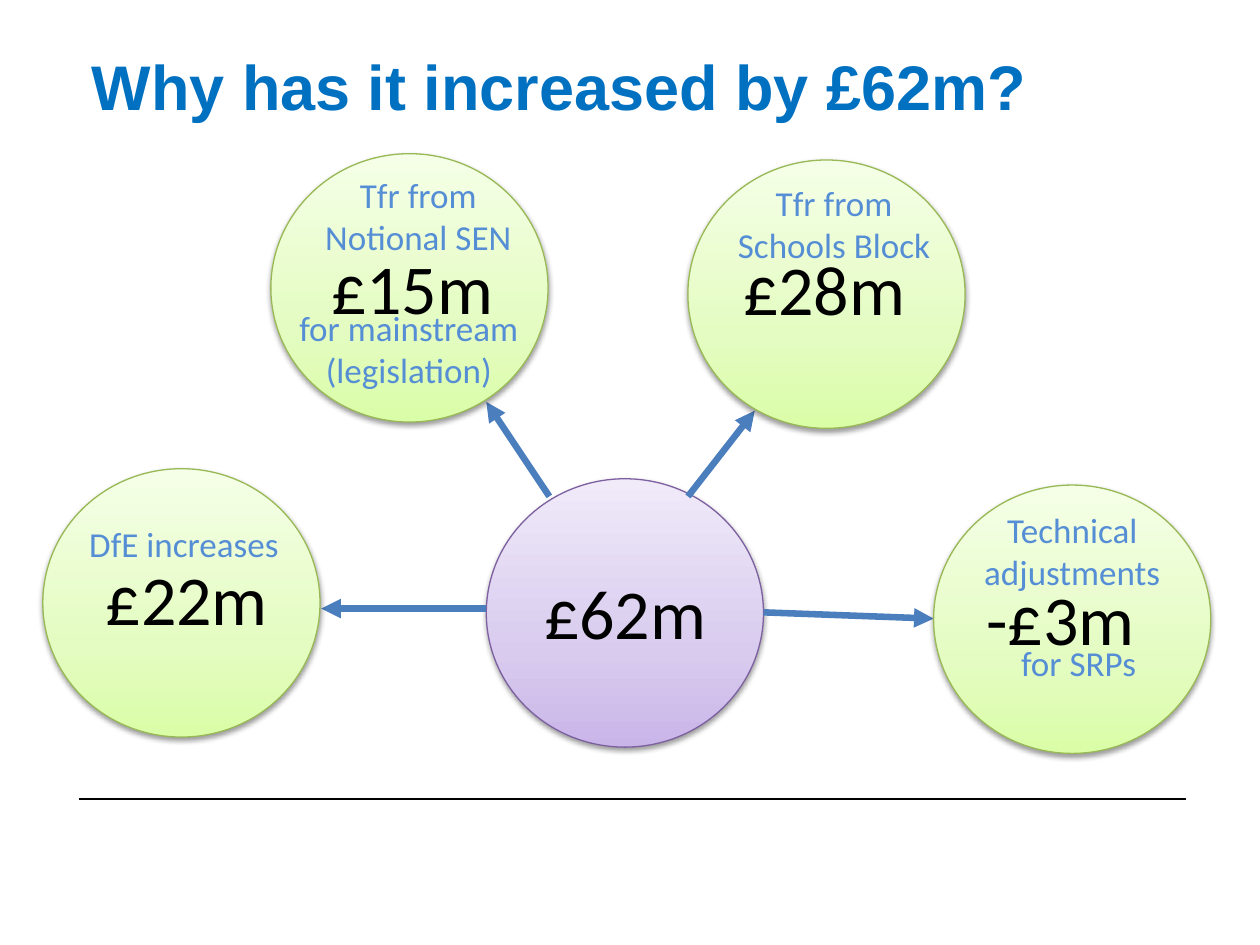
from dataclasses import dataclass

from lxml import etree
from pptx import Presentation
from pptx.dml.color import RGBColor
from pptx.enum.shapes import MSO_CONNECTOR, MSO_SHAPE
from pptx.enum.text import MSO_ANCHOR, PP_ALIGN
from pptx.oxml import parse_xml
from pptx.oxml.ns import nsdecls, qn
from pptx.util import Inches, Pt

OVAL = MSO_SHAPE.OVAL
STRAIGHT = MSO_CONNECTOR.STRAIGHT
LEFT, CENTER = PP_ALIGN.LEFT, PP_ALIGN.CENTER
TOP, MIDDLE = MSO_ANCHOR.TOP, MSO_ANCHOR.MIDDLE

BLACK = RGBColor(0x00, 0x00, 0x00)
TITLE = RGBColor(0x00, 0x70, 0xC0)
NOTE = RGBColor(0x55, 0x8E, 0xD5)
ARROW = RGBColor(0x4B, 0x7E, 0xBC)
GREEN_LINE = RGBColor(0x98, 0xB9, 0x55)
GREENS = (RGBColor(0xDA, 0xFD, 0xA7), RGBColor(0xE4, 0xFC, 0xC2), RGBColor(0xF5, 0xFF, 0xE7))
VIOLET_LINE = RGBColor(0x7D, 0x60, 0xA0)
VIOLETS = (RGBColor(0xC9, 0xB5, 0xE8), RGBColor(0xD8, 0xCB, 0xEE), RGBColor(0xF0, 0xEA, 0xF9))

# The slide is a grid of 100 columns and 75 rows.
COLS, ROWS = 100, 75
WIDE, HIGH = Inches(10), Inches(7.5)
DISC_W, DISC_H = 22, 21.3
SUM_W, SUM_H = 15.7, 7.7
STOPS = (0, 35, 100)


@dataclass
class Note:
    text: str
    col: float
    row: float
    cols: float = 17.8
    rows: float = 10.8
    align: PP_ALIGN = CENTER


@dataclass
class Disc:
    col: float
    row: float
    total: Note
    notes: tuple[Note, ...] = ()
    fills: tuple[RGBColor, ...] = GREENS
    edge: RGBColor = GREEN_LINE


@dataclass
class Link:
    start: tuple[float, float]
    end: tuple[float, float]


def total(text: str, col: float, row: float) -> Note:
    return Note(text, col, row, SUM_W, SUM_H, LEFT)


HUB = Disc(38.6, 38, total("£62m", 42.2, 44.7), fills=VIOLETS, edge=VIOLET_LINE)
PARTS = (
    Disc(3.4, 37.2, total("£22m", 7.4, 43.6),
         (Note("DfE increases", 6.1, 41, rows=7.4, align=LEFT),)),
    Disc(54.6, 12.7, total("£28m", 58, 19),
         (Note("Tfr from Schools Block", 57.3, 13.9),)),
    Disc(21.5, 12.2, total("£15m", 25.3, 18.9),
         (Note("Tfr from Notional SEN", 24.3, 13.3),
          Note("for mainstream\n(legislation)", 21.3, 23.8, cols=22.3))),
    Disc(74.1, 38.5, total("-£3m", 77.3, 45.2),
         (Note("Technical adjustments", 76.2, 39.9),
          Note("for SRPs", 76.7, 50.4, rows=7.4))),
)
LINKS = (
    Link((38.6, 48.3), (25.5, 48.3)),
    Link((43.6, 39.4), (38.6, 31.9)),
    Link((54.6, 39.4), (59.9, 32.6)),
    Link((60.6, 48.6), (74.1, 49.1)),
)


def across(cols: float) -> int:
    return round(WIDE * cols / COLS)


def down(rows: float) -> int:
    return round(HIGH * rows / ROWS)


def write(slide, note: Note, *, size: float, color: RGBColor,
          face: str = "Calibri", bold: bool = False, anchor: MSO_ANCHOR = TOP) -> None:
    box = slide.shapes.add_textbox(
        across(note.col), down(note.row), across(note.cols), down(note.rows))
    frame = box.text_frame
    frame.word_wrap = True
    frame.vertical_anchor = anchor
    frame.text = note.text
    for para in frame.paragraphs:
        para.alignment = note.align
        font = para.font
        font.name, font.size, font.bold = face, Pt(size), bold
        font.color.rgb = color


def shade(shape, fills: tuple[RGBColor, ...]) -> None:
    """Fill with a gradient rising from the foot, and cast a soft shadow below."""
    stops = "".join(f'<a:gs pos="{pos * 1000}"><a:srgbClr val="{color}"/></a:gs>'
                    for pos, color in zip(STOPS, fills))
    props = shape.element.spPr
    props.find(qn("a:prstGeom")).addnext(parse_xml(
        f'<a:gradFill {nsdecls("a")} rotWithShape="1"><a:gsLst>{stops}</a:gsLst>'
        '<a:lin ang="16200000" scaled="0"/></a:gradFill>'))
    props.append(parse_xml(
        f'<a:effectLst {nsdecls("a")}><a:outerShdw blurRad="{Pt(3.1)}" dist="{Pt(1.6)}" '
        'dir="5400000" rotWithShape="0"><a:srgbClr val="000000"><a:alpha val="38000"/>'
        '</a:srgbClr></a:outerShdw></a:effectLst>'))


def draw_disc(slide, disc: Disc) -> None:
    oval = slide.shapes.add_shape(
        OVAL, across(disc.col), down(disc.row), across(DISC_W), down(DISC_H))
    oval.line.color.rgb = disc.edge
    oval.line.width = Pt(0.75)
    shade(oval, disc.fills)
    write(slide, disc.total, size=40, color=BLACK)
    for note in disc.notes:
        write(slide, note, size=20, color=NOTE)


def draw_link(slide, link: Link, color: RGBColor, width: float, head: bool = True) -> None:
    (col, row), (end_col, end_row) = link.start, link.end
    line = slide.shapes.add_connector(
        STRAIGHT, across(col), down(row), across(end_col), down(end_row))
    line.line.color.rgb = color
    line.line.width = Pt(width)
    props = line.element.spPr
    if head:
        etree.SubElement(props.find(qn("a:ln")), qn("a:tailEnd"), type="triangle")
    etree.SubElement(props, qn("a:effectLst"))


def main() -> None:
    deck = Presentation()
    deck.slide_width, deck.slide_height = WIDE, HIGH
    slide = deck.slides.add_slide(deck.slide_layouts[6])
    write(slide, Note("Why has it increased by £62m?", 6.3, 0.5, 90, 12.5, LEFT),
          size=36, color=TITLE, face="Arial", bold=True, anchor=MIDDLE)
    draw_link(slide, Link((6.3, 63.4), (94.1, 63.4)), BLACK, 1, head=False)
    draw_disc(slide, HUB)
    for link in LINKS:
        draw_link(slide, link, ARROW, 3.75)
    for disc in PARTS:
        draw_disc(slide, disc)
    deck.save("out.pptx")


if __name__ == "__main__":
    main()
